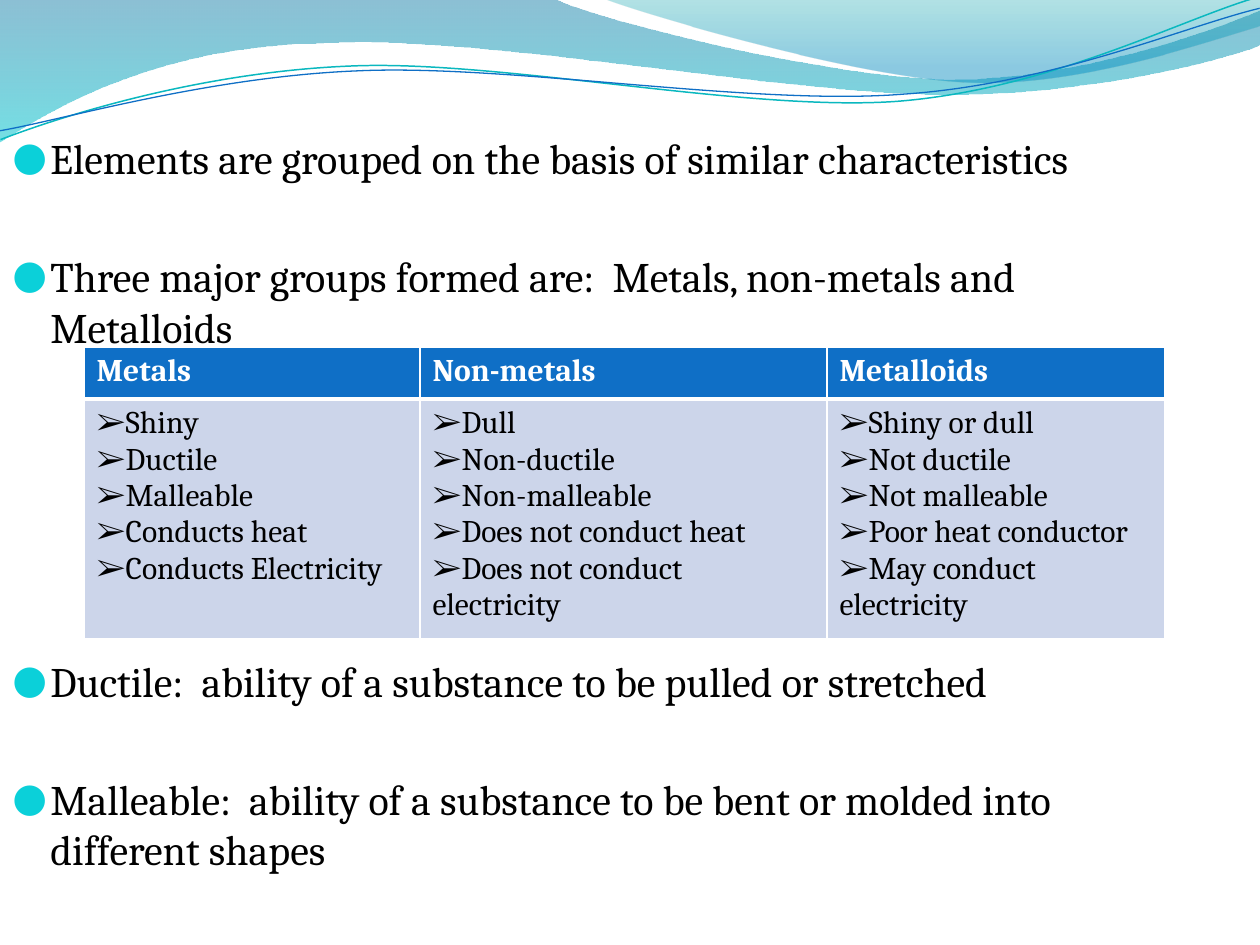
import pptx
import pptx.dml.color
import pptx.oxml.ns
import pptx.util
from lxml import etree

RGB = pptx.dml.color.RGBColor
WHITE = RGB(0xFF, 0xFF, 0xFF)
BLACK = RGB(0, 0, 0)
BLUE = RGB(0x0F, 0x6F, 0xC6)
TEAL = RGB(0x0A, 0xB8, 0xBF)
CYAN = RGB(0x0B, 0xD0, 0xD9)
PALE = RGB(0xCC, 0xD5, 0xEA)
DEEP_BLUE = RGB(0x00, 0x74, 0xA1)
AQUA = RGB(0x00, 0xC6, 0xCF)
DARK_TEAL = RGB(0x00, 0xA1, 0xA9)
SKY = RGB(0x00, 0x8B, 0xBF)

PX = 914400 / 126
LINE_TILT = 357.3

# Each step lists its points: one for a straight line, three for a Bezier curve.
BROAD_WAVE = [
    [(0, 0)], [(554, -1)],
    [(600, 21), (837, 79), (955, 79)], [(1075, 79), (1207, 33), (1260, 11)],
    [(1261, 45)],
    [(1239, 55), (1096, 96), (940, 94)], [(784, 94), (481, 35), (324, 43)],
    [(163, 45), (58, 105), (-1, 142)],
]
RIGHT_WAVE = [
    [(604, -1)],
    [(641, 14), (859, 78), (969, 82)], [(1079, 87), (1211, 40), (1260, 26)],
    [(1260, 0)],
]
TEAL_LINE = [
    [(-2, 110)],
    [(58, 90), (199, 52), (350, 53)], [(499, 53), (745, 118), (896, 114)],
    [(1049, 109), (1184, 45), (1260, 27)],
]
BLUE_LINE = [
    [(-2, 101)],
    [(57, 94), (207, 57), (357, 58)], [(509, 58), (750, 112), (902, 107)],
    [(1052, 104), (1188, 52), (1262, 38)],
]

# Text and the space before it in points
STATEMENTS = [
    ("Elements are grouped on the basis of similar characteristics", 4.8),
    ("Three major groups formed are:  Metals, non-metals and Metalloids", 38.9),
    ("Ductile:  ability of a substance to be pulled or stretched", 173.5),
    ("Malleable:  ability of a substance to be bent or molded into different shapes", 38.9),
]
GROUPS = {
    "Metals": ["Shiny", "Ductile", "Malleable", "Conducts heat", "Conducts Electricity"],
    "Non-metals": ["Dull", "Non-ductile", "Non-malleable", "Does not conduct heat",
                   "Does not conduct\nelectricity"],
    "Metalloids": ["Shiny or dull", "Not ductile", "Not malleable", "Poor heat conductor",
                   "May conduct electricity"],
}


def px(n):
    return pptx.util.Emu(round(n * PX))


def sub(parent, tag, **attrs):
    return etree.SubElement(parent, pptx.oxml.ns.qn(tag), attrs)


class SlideBuilder:
    font = "Cambria"
    body_size = 24
    table_size = 18

    def __init__(self, prs):
        self.s = prs.slides.add_slide(prs.slide_layouts[6])

    def outline(self, steps, close):
        """Draw straight steps between end points, then bend the curved ones."""
        ends = [(px(x), px(y)) for x, y in (step[-1] for step in steps)]
        fb = self.s.shapes.build_freeform(*ends[0], scale=1.0)
        fb.add_line_segments(ends[1:], close=close)
        sp = fb.convert_to_shape()
        sp.shadow.inherit = False
        segments = list(sp._element.spPr.iter(pptx.oxml.ns.qn("a:lnTo")))
        for segment, step in zip(segments, steps[1:]):
            if len(step) == 3:
                bend = etree.Element(pptx.oxml.ns.qn("a:cubicBezTo"))
                for x, y in step:
                    sub(bend, "a:pt", x=str(px(x) - sp.left), y=str(px(y) - sp.top))
                segment.getparent().replace(segment, bend)
        return sp

    def wave(self, steps, stops):
        """Draw a closed area; each stop is position, colour, opacity in percent."""
        sp = self.outline(steps, True)
        sp.line.fill.background()
        sp.fill.gradient()
        sp.fill.gradient_angle = 270
        for stop, (position, color, _) in zip(sp.fill.gradient_stops, stops):
            stop.position = position
            stop.color.rgb = color
        colors = sp._element.spPr.iter(pptx.oxml.ns.qn("a:srgbClr"))
        for node, (_, _, opacity) in zip(colors, stops):
            sub(node, "a:alpha", val=str(opacity * 1000))

    def curve(self, steps, color, width):
        sp = self.outline(steps, False)
        sp.rotation = LINE_TILT
        sp.fill.background()
        sp.line.color.rgb = color
        sp.line.width = pptx.util.Pt(width)

    def run(self, p, text, size, color, bold=False):
        r = p.add_run()
        r.text = text
        r.font.name = self.font
        r.font.size = pptx.util.Pt(size)
        r.font.color.rgb = color
        r.font.bold = bold

    def bullet(self, p, char, indent=0, color=BLACK, percent=100):
        pPr = p._p.get_or_add_pPr()
        pPr.set("marL", str(px(indent)))
        pPr.set("indent", str(px(-indent)))
        sub(sub(pPr, "a:buClr"), "a:srgbClr", val=str(color))
        sub(pPr, "a:buSzPct", val=str(percent * 1000))
        sub(pPr, "a:buFont", typeface=self.font)
        sub(pPr, "a:buChar", char=char)

    def statements(self, x, y, w, h, items):
        tf = self.s.shapes.add_textbox(px(x), px(y), px(w), px(h)).text_frame
        tf.word_wrap = True
        for i, (text, before) in enumerate(items):
            p = tf.add_paragraph() if i else tf.paragraphs[0]
            p.space_before = pptx.util.Pt(before)
            self.bullet(p, "●", 38, CYAN, 95)
            self.run(p, text, self.body_size, BLACK)

    def cell(self, cell, fill, bottom):
        """Give a cell its fill and white borders, the bottom one in points."""
        tcPr = cell._tc.get_or_add_tcPr()
        for side, width in (("L", 1), ("R", 1), ("T", 1), ("B", bottom)):
            ln = sub(tcPr, "a:ln" + side, w=str(pptx.util.Pt(width)))
            sub(sub(ln, "a:solidFill"), "a:srgbClr", val=str(WHITE))
        cell.fill.solid()
        cell.fill.fore_color.rgb = fill

    def table(self, x, y, widths, row_height, height, groups):
        """Draw the group table; its second row grows with its text."""
        frame = self.s.shapes.add_table(
            2, len(widths), px(x), px(y), px(sum(widths)), px(height))
        table = frame.table
        table.horz_banding = False
        for row in table.rows:
            row.height = px(row_height)
        frame.height = px(height)
        for c, (name, traits) in enumerate(groups.items()):
            table.columns[c].width = px(widths[c])
            head, body = table.cell(0, c), table.cell(1, c)
            self.cell(head, BLUE, 3)
            self.cell(body, PALE, 1)
            self.run(head.text_frame.paragraphs[0], name, self.table_size, WHITE, True)
            tf = body.text_frame
            for i, trait in enumerate(traits):
                p = tf.add_paragraph() if i else tf.paragraphs[0]
                self.bullet(p, "➢")
                for n, line in enumerate(trait.split("\n")):
                    if n:
                        p.add_line_break()
                    self.run(p, line, self.table_size, BLACK)


def main():
    prs = pptx.Presentation()
    prs.slide_width, prs.slide_height = px(1260), px(945)
    b = SlideBuilder(prs)
    b.wave(BROAD_WAVE, [(0, DEEP_BLUE, 45), (1, AQUA, 55)])
    b.wave(RIGHT_WAVE, [(0, DARK_TEAL, 30), (0.8, SKY, 45)])
    b.curve(TEAL_LINE, TEAL, 0.85)
    b.curve(BLUE_LINE, BLUE, 0.75)
    b.statements(0, 126, 1134, 777, STATEMENTS)
    b.table(84, 347, [336, 407, 338], 52, 291, GROUPS)
    prs.save("out.pptx")


if __name__ == "__main__":
    main()
